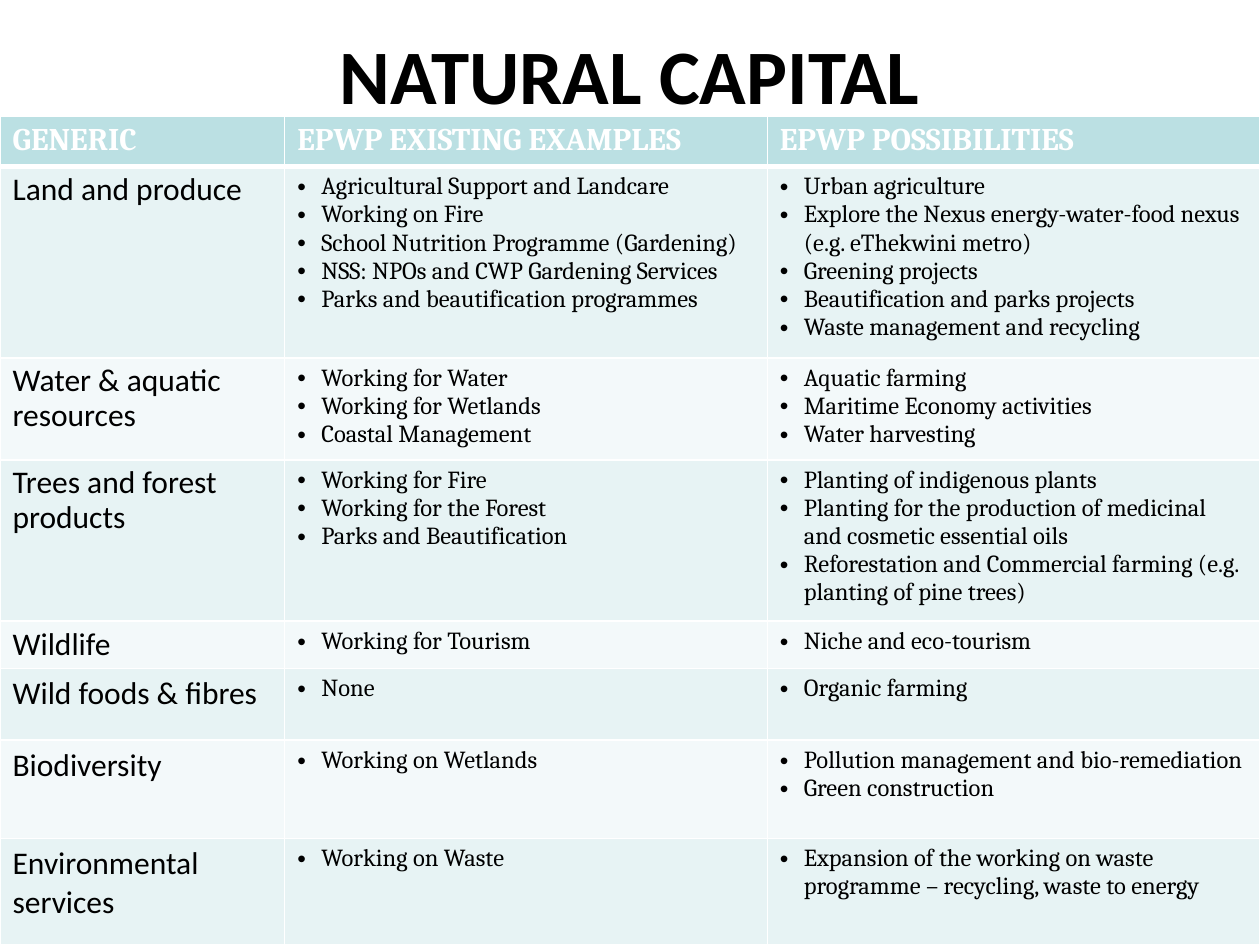
from dataclasses import dataclass

from lxml import etree
from pptx import Presentation
from pptx.dml.color import RGBColor
from pptx.enum import text as txt
from pptx.oxml import ns
from pptx.util import Inches, Pt

COLORS = {
    "ink": "000000",
    "white": "FFFFFF",
    "header": "BBE0E3",
    "band_dark": "E7F3F4",
    "band_light": "F3F9FA",
}
COLUMN_WIDTHS = (2.26, 3.83, 3.91)
HEADER_HEIGHT = 0.4
HEADINGS = ("GENERIC", "EPWP EXISTING EXAMPLES", "EPWP POSSIBILITIES")
BULLET_INDENT = 0.19


@dataclass(frozen=True)
class Resource:
    name: str
    height: float
    examples: tuple[str, ...]
    possibilities: tuple[str, ...]
    spacing: float = 1.0


RESOURCES = (
    Resource(
        "Land and produce", 1.52,
        ("Agricultural Support and Landcare", "Working on Fire",
         "School Nutrition Programme (Gardening)",
         "NSS: NPOs and CWP Gardening Services",
         "Parks and beautification programmes"),
        ("Urban agriculture",
         "Explore the Nexus energy-water-food nexus (e.g. eThekwini metro)",
         "Greening projects", "Beautification and parks projects",
         "Waste management and recycling"),
        spacing=0.9),
    Resource(
        "Water & aquatic resources", 0.81,
        ("Working for Water", "Working for Wetlands", "Coastal Management"),
        ("Aquatic farming", "Maritime Economy activities", "Water harvesting"),
        spacing=0.9),
    Resource(
        "Trees and forest products", 1.28,
        ("Working for Fire", "Working for the Forest",
         "Parks and Beautification"),
        ("Planting of indigenous plants",
         "Planting for the production of medicinal and cosmetic essential oils",
         "Reforestation and Commercial farming (e.g. planting of pine trees)"),
        spacing=0.9),
    Resource("Wildlife", 0.37, ("Working for Tourism",),
             ("Niche and eco-tourism",), spacing=0.9),
    Resource("Wild foods & fibres", 0.57, ("None",), ("Organic farming",)),
    Resource("Biodiversity", 0.78, ("Working on Wetlands",),
             ("Pollution management and bio-remediation", "Green construction")),
    Resource(
        "Environmental services", 0.84, ("Working on Waste",),
        ("Expansion of the working on waste programme – recycling, "
         "waste to energy",)),
)


def rgb(name: str) -> RGBColor:
    return RGBColor.from_string(COLORS[name])


def write(frame, *lines: str, size: float, font: str, color: str = "ink",
          bold: bool = False, bullet: bool = False, spacing: float = 1.0,
          align=txt.PP_ALIGN.LEFT) -> None:
    """Fill a text frame with one paragraph per line."""
    for index, line in enumerate(lines):
        paragraph = frame.add_paragraph() if index else frame.paragraphs[0]
        paragraph.alignment = align
        paragraph.line_spacing = spacing
        run = paragraph.add_run()
        run.text = line
        run.font.size, run.font.name, run.font.bold = Pt(size), font, bold
        run.font.color.rgb = rgb(color)
        if bullet:
            properties = paragraph._p.get_or_add_pPr()
            properties.set("marL", str(Inches(BULLET_INDENT)))
            properties.set("indent", str(-Inches(BULLET_INDENT)))
            etree.SubElement(properties, ns.qn("a:buFont"), typeface="Arial")
            etree.SubElement(properties, ns.qn("a:buChar"), char="•")


def paint(cell, fill: str, **borders: float) -> None:
    """Fill a cell and give it white borders, named by side, in points."""
    cell.fill.solid()
    cell.fill.fore_color.rgb = rgb(fill)
    properties = cell._tc.get_or_add_tcPr()
    for position, side in enumerate(side for side in "LRTB" if side in borders):
        line = etree.Element(ns.qn(f"a:ln{side}"), w=str(Pt(borders[side])))
        solid = etree.SubElement(line, ns.qn("a:solidFill"))
        etree.SubElement(solid, ns.qn("a:srgbClr"), val=COLORS["white"])
        properties.insert(position, line)


def add_capital_table(slide) -> None:
    heights = (HEADER_HEIGHT, *(resource.height for resource in RESOURCES))
    table = slide.shapes.add_table(
        len(heights), len(COLUMN_WIDTHS), Inches(0), Inches(0.92),
        Inches(sum(COLUMN_WIDTHS)), Inches(sum(heights))).table
    for column, width in zip(table.columns, COLUMN_WIDTHS):
        column.width = Inches(width)
    for row, height in zip(table.rows, heights):
        row.height = Inches(height)

    # Header row, with a heavier rule below
    for cell, heading in zip(table.rows[0].cells, HEADINGS):
        paint(cell, "header", L=1, R=1, T=1, B=3)
        write(cell.text_frame, heading, size=18, font="Cambria",
              color="white", bold=True)

    # One banded row per resource
    for number, resource in enumerate(RESOURCES, start=1):
        name, *lists = table.rows[number].cells
        for cell in (name, *lists):
            paint(cell, "band_dark" if number % 2 else "band_light",
                  L=1, R=1, B=1)
        write(name.text_frame, resource.name, size=18, font="Calibri",
              spacing=resource.spacing)
        for cell, items in zip(lists, (resource.examples,
                                       resource.possibilities)):
            write(cell.text_frame, *items, size=14, font="Cambria", bullet=True)


def main() -> None:
    deck = Presentation()
    deck.slide_width, deck.slide_height = Inches(10), Inches(7.5)
    slide = deck.slides.add_slide(deck.slide_layouts[5])

    # Title
    title = slide.shapes.title
    title.left, title.top = Inches(0.75), Inches(0)
    title.width, title.height = Inches(8.5), Inches(1.17)
    title.text_frame.vertical_anchor = txt.MSO_ANCHOR.MIDDLE
    write(title.text_frame, "NATURAL CAPITAL", size=44, font="Calibri",
          bold=True, align=txt.PP_ALIGN.CENTER)

    add_capital_table(slide)
    deck.save("out.pptx")


if __name__ == "__main__":
    main()
